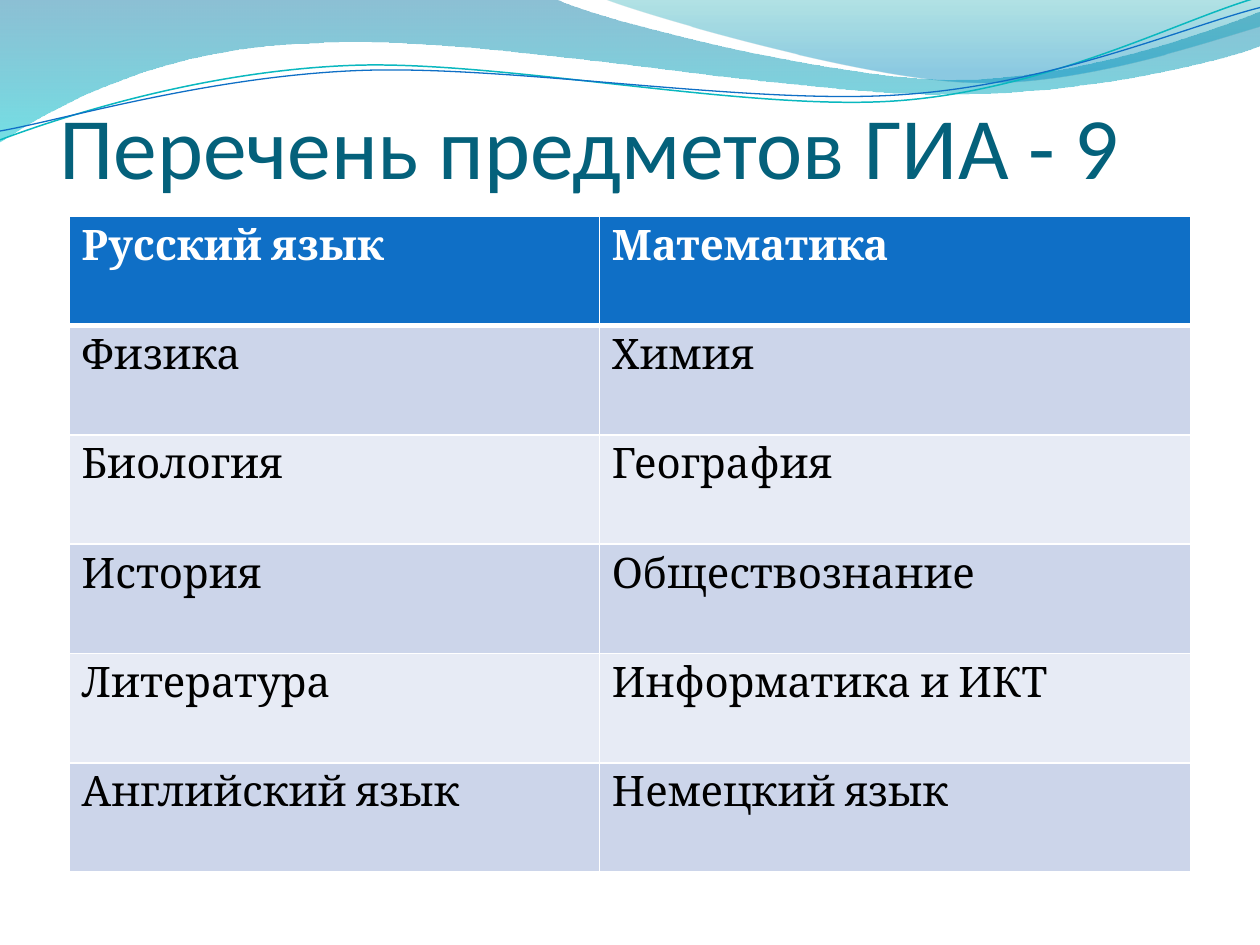
import pptx
import pptx.dml.color
import pptx.enum.text
import pptx.oxml
import pptx.oxml.ns
import pptx.util

Pt = pptx.util.Pt
RGBColor = pptx.dml.color.RGBColor

# Content
TITLE = "Перечень предметов ГИА - 9"
SUBJECTS = [
    ("Русский язык", "Математика"),
    ("Физика", "Химия"),
    ("Биология", "География"),
    ("История", "Обществознание"),
    ("Литература", "Информатика и ИКТ"),
    ("Английский язык", "Немецкий язык"),
]

# Colours
WHITE = RGBColor(0xFF, 0xFF, 0xFF)
BLACK = RGBColor(0, 0, 0)
TITLE_COLOR = RGBColor(0x04, 0x61, 0x7B)
BLUE = RGBColor(0x0F, 0x6F, 0xC6)
TEAL = RGBColor(0x0A, 0xB8, 0xBF)
BANDS = [RGBColor(0xCC, 0xD5, 0xEA), RGBColor(0xE7, 0xEB, 0xF5)]
DEEP_BLUE = RGBColor(0x00, 0x74, 0xA1)
CYAN = RGBColor(0x00, 0xC6, 0xCF)
SEA_GREEN = RGBColor(0x00, 0xA1, 0xA9)
SKY_BLUE = RGBColor(0x00, 0x8B, 0xBF)

# Header waves in points: two numbers are a line, six a Bezier curve.
# Gradient stops are (position %, colour, opacity %).
WAVES = [
    ([(0, 0), (317, -0.7), (343, 12, 478, 45.4, 546, 45.4),
      (614, 45.4, 690, 18.7, 720, 6.5), (720.7, 26),
      (708, 31.7, 626, 54.7, 537, 54), (448, 54, 275, 20.2, 185, 24.5),
      (93, 26, 33, 59.8, -0.7, 81.4)],
     [(0, DEEP_BLUE, 45), (100, CYAN, 55)]),
    ([(345, -0.7), (366, 8, 491, 44.6, 553.7, 46.8),
      (616, 49.7, 692, 23, 720, 15), (720, 0)],
     [(0, SEA_GREEN, 30), (80, SKY_BLUE, 45)]),
]
# Strands are given level, then tilted
STRANDS = [
    ([(-1.4, 63), (33.8, 51.7, 114.1, 29.4, 199.8, 29.9),
      (284.8, 30.3, 425.9, 67.2, 512.5, 64.8),
      (599.1, 62.4, 676.5, 25.7, 720.2, 15.6)], TEAL, 0.85),
    ([(-1.1, 57.9), (32.9, 53.7, 118.3, 32.5, 204.1, 33),
      (290.6, 33.4, 428.9, 63.8, 515.5, 61.4),
      (601.4, 59.6, 678.4, 30.1, 721.4, 21.3)], BLUE, 0.75),
]
STRAND_TILT = 357.3

# Layout in points
TABLE_LEFT, TABLE_TOP, ROW_HEIGHT = 39.5, 123.5, 62.5
COL_WIDTHS = [303, 338]
UNITS = 100  # freeform units per point


def add_outline(shapes, segments, close):
    """Draw the outline, joining each curve's three points into one Bezier."""
    points = [(seg[k] * UNITS, seg[k + 1] * UNITS)
              for seg in segments for k in range(0, len(seg), 2)]
    builder = shapes.build_freeform(*points[0], scale=Pt(1) / UNITS)
    builder.add_line_segments(points[1:], close=close)
    sp = builder.convert_to_shape()
    sp.shadow.inherit = False
    lines = iter(sp._element.findall(".//" + pptx.oxml.ns.qn("a:lnTo")))
    for seg in segments[1:]:
        first = next(lines)
        if len(seg) == 6:
            curve = pptx.oxml.parse_xml(
                f'<a:cubicBezTo {pptx.oxml.ns.nsdecls("a")}/>')
            first.addprevious(curve)
            for line in (first, next(lines), next(lines)):
                curve.append(line[0])
                line.getparent().remove(line)
    return sp


def set_gradient(sp, stops):
    """Fill from top to bottom with partly transparent stops."""
    sp.fill.gradient()
    grad = sp._element.spPr.find(pptx.oxml.ns.qn("a:gradFill"))
    gs = "".join(
        f'<a:gs pos="{pos * 1000}"><a:srgbClr val="{color}">'
        f'<a:alpha val="{alpha * 1000}"/></a:srgbClr></a:gs>'
        for pos, color, alpha in stops)
    new = pptx.oxml.parse_xml(
        f'<a:gradFill {pptx.oxml.ns.nsdecls("a")} rotWithShape="1"><a:gsLst>{gs}</a:gsLst>'
        '<a:lin ang="5400000" scaled="0"/></a:gradFill>')
    grad.getparent().replace(grad, new)


def set_borders(cell, **widths):
    tcPr = cell._tc.get_or_add_tcPr()
    for side in "LRTB":
        tcPr.append(pptx.oxml.parse_xml(
            f'<a:ln{side} {pptx.oxml.ns.nsdecls("a")} w="{Pt(widths.get(side, 1))}">'
            f'<a:solidFill><a:srgbClr val="{WHITE}"/></a:solidFill></a:ln{side}>'))


def write(tf, text, font, size, color, bold=False):
    r = tf.paragraphs[0].add_run()
    r.text = text
    r.font.name = font
    r.font.size = Pt(size)
    r.font.bold = bold
    r.font.color.rgb = color


prs = pptx.Presentation()
prs.slide_width, prs.slide_height = Pt(720), Pt(540)
slide = prs.slides.add_slide(prs.slide_layouts[6])
shapes = slide.shapes

# Header waves and thin strands
for segments, stops in WAVES:
    sp = add_outline(shapes, segments, close=True)
    set_gradient(sp, stops)
    sp.line.fill.background()
for segments, color, width in STRANDS:
    sp = add_outline(shapes, segments, close=False)
    sp.rotation = STRAND_TILT
    sp.fill.background()
    sp.line.color.rgb = color
    sp.line.width = Pt(width)

# Title
tf = shapes.add_textbox(Pt(34), Pt(22.5), Pt(648), Pt(90)).text_frame
tf.word_wrap = True
tf.vertical_anchor = pptx.enum.text.MSO_ANCHOR.BOTTOM
tf.margin_left = tf.margin_right = tf.margin_bottom = 0
tf.margin_top = Pt(3.6)
write(tf, TITLE, font="Calibri", size=50, color=TITLE_COLOR)

# Subject table
table = shapes.add_table(
    len(SUBJECTS), len(COL_WIDTHS), Pt(TABLE_LEFT), Pt(TABLE_TOP),
    Pt(sum(COL_WIDTHS)), Pt(ROW_HEIGHT * len(SUBJECTS))).table
for col, width in zip(table.columns, COL_WIDTHS):
    col.width = Pt(width)
for i, subjects in enumerate(SUBJECTS):
    table.rows[i].height = Pt(ROW_HEIGHT)
    header = i == 0
    for j, subject in enumerate(subjects):
        cell = table.cell(i, j)
        set_borders(cell, T=3 if i == 1 else 1, B=3 if header else 1)
        cell.fill.solid()
        cell.fill.fore_color.rgb = BLUE if header else BANDS[(i - 1) % 2]
        write(cell.text_frame, subject, font="Cambria", size=24,
              color=WHITE if header else BLACK, bold=header)

prs.save("out.pptx")
